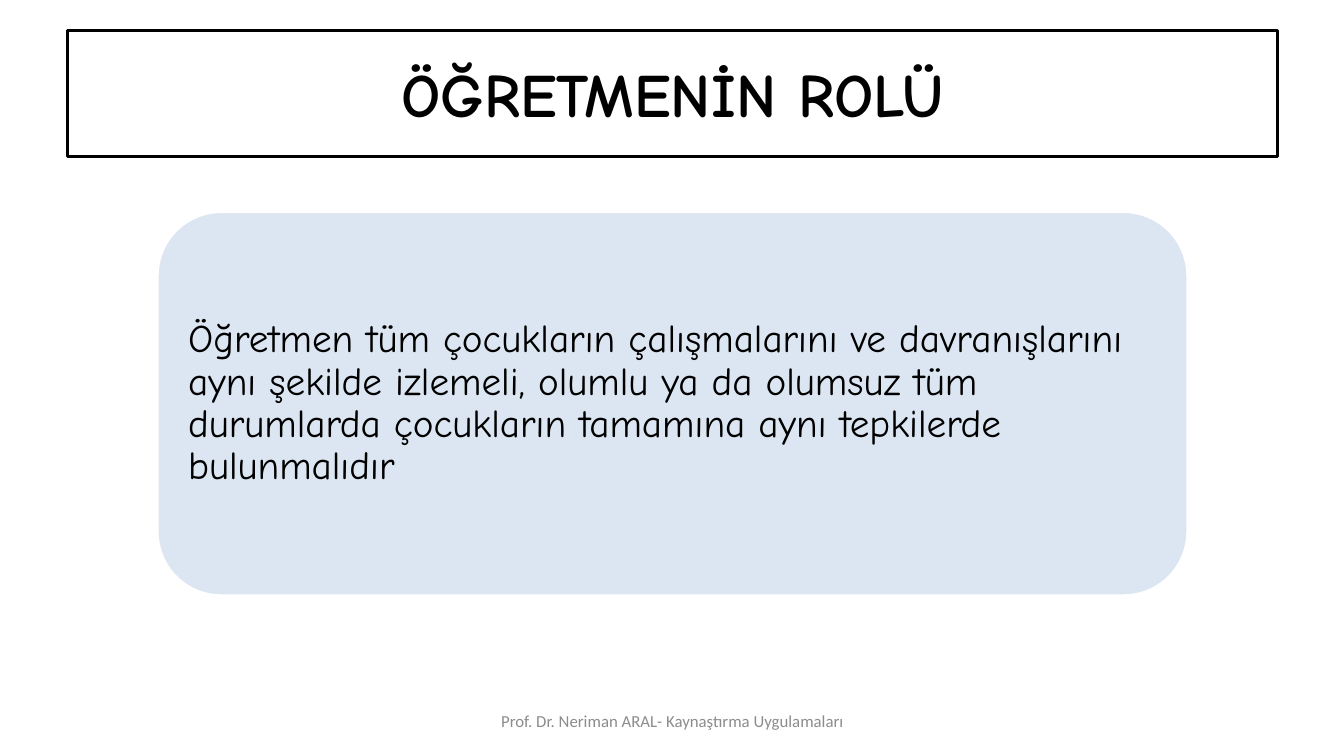
from pptx import Presentation
from pptx.dml.color import RGBColor
from pptx.enum import shapes, text
from pptx.util import Inches, Pt

COLORS = {
    "white": "FFFFFF",
    "black": "000000",
    "panel": "DCE6F2",
    "footer": "8C8C8C",
}


def color(name):
    return RGBColor.from_string(COLORS[name])


def write_text(shape, content, font, size, ink, align, bold=False):
    frame = shape.text_frame
    frame.text = content
    frame.word_wrap = True
    frame.vertical_anchor = text.MSO_ANCHOR.MIDDLE
    paragraph = frame.paragraphs[0]
    paragraph.alignment = align
    run_font = paragraph.runs[0].font
    run_font.name = font
    run_font.size = Pt(size)
    run_font.bold = bold
    run_font.color.rgb = color(ink)
    return paragraph


def add_box(slide, kind, box, fill, line):
    shape = slide.shapes.add_shape(kind, *map(Inches, box))
    shape.shadow.inherit = False
    shape.fill.solid()
    shape.fill.fore_color.rgb = color(fill)
    shape.line.color.rgb = color(line)
    shape.line.width = Pt(2)
    return shape


def add_message(slide, content):
    panel = add_box(slide, shapes.MSO_SHAPE.ROUNDED_RECTANGLE,
                    (1.56, 2.1, 10.22, 3.81), "panel", "white")
    frame = panel.text_frame
    frame.margin_left = frame.margin_right = Inches(0.12)
    frame.margin_top = frame.margin_bottom = Inches(0.06)
    paragraph = write_text(panel, content, "Comic Neue", 28, "black", text.PP_ALIGN.LEFT)
    paragraph.line_spacing = 0.9


def add_footer(slide, content):
    footer = slide.shapes.add_textbox(*map(Inches, (4.56, 6.95, 4.22, 0.4)))
    write_text(footer, content, "Calibri", 12, "footer", text.PP_ALIGN.CENTER)


def add_title(slide, content):
    title = add_box(slide, shapes.MSO_SHAPE.RECTANGLE,
                    (0.67, 0.3, 12, 1.25), "white", "black")
    write_text(title, content, "Comic Neue", 44, "black", text.PP_ALIGN.CENTER, bold=True)


def main():
    presentation = Presentation()
    presentation.slide_width = Inches(13.33)
    presentation.slide_height = Inches(7.5)
    slide = presentation.slides.add_slide(presentation.slide_layouts[6])
    add_message(slide, "Öğretmen tüm çocukların çalışmalarını ve davranışlarını aynı şekilde "
                       "izlemeli, olumlu ya da olumsuz tüm durumlarda çocukların tamamına "
                       "aynı tepkilerde bulunmalıdır")
    add_footer(slide, "Prof. Dr. Neriman ARAL- Kaynaştırma Uygulamaları")
    add_title(slide, "ÖĞRETMENİN ROLÜ")
    presentation.save("out.pptx")


if __name__ == "__main__":
    main()
